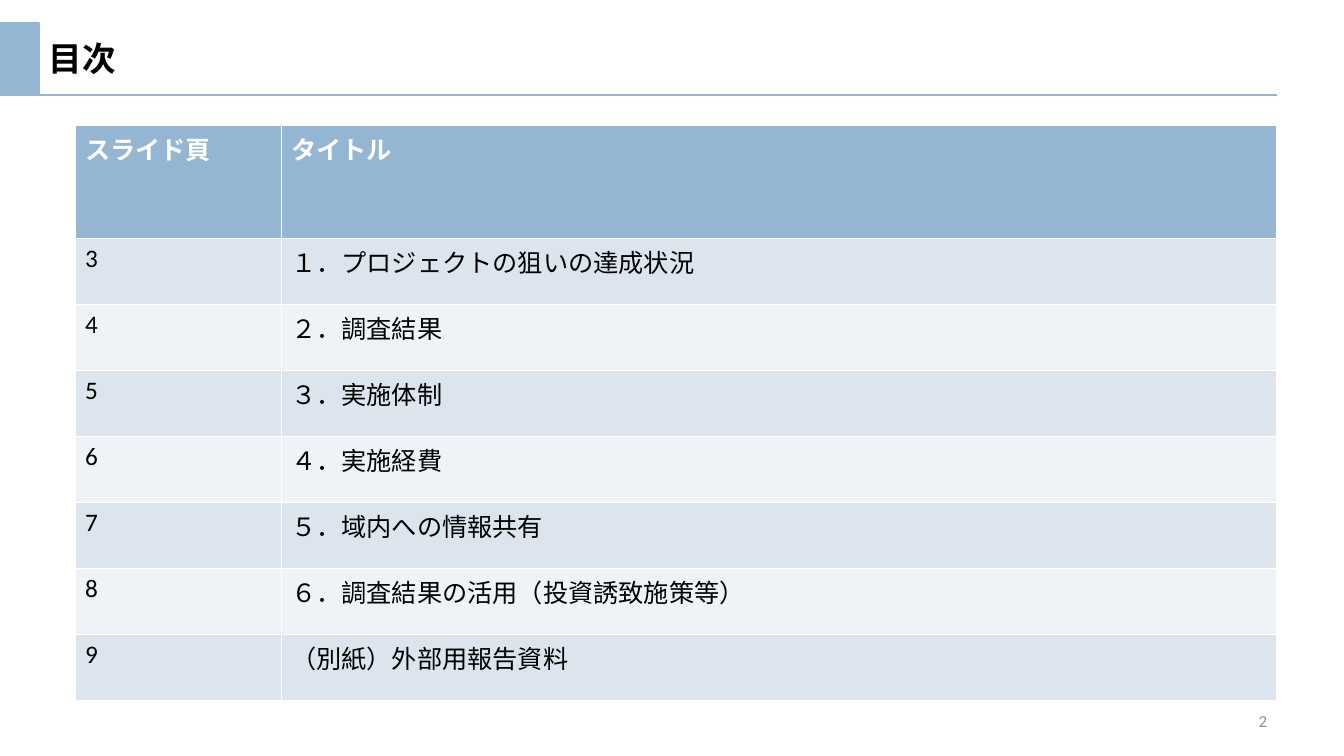
from dataclasses import dataclass

import pptx
import pptx.dml.color
import pptx.enum.shapes
import pptx.enum.text
import pptx.oxml.ns
import pptx.util
from lxml import etree

PX_PER_INCH = 100.8


@dataclass(frozen=True)
class Theme:
    font: str = "Calibri"
    accent: str = "94B6D2"
    band_dark: str = "DCE5EE"
    band_light: str = "EFF3F7"
    text: str = "000000"
    muted: str = "8C8C8C"
    white: str = "FFFFFF"
    title_size: int = 24
    table_size: int = 18
    number_size: int = 12
    rule_width: int = 2
    border_width: float = 0.73


@dataclass(frozen=True)
class Box:
    left: int
    top: int
    width: int
    height: int

    def emu(self) -> tuple:
        return tuple(px(n) for n in (self.left, self.top, self.width, self.height))


@dataclass(frozen=True)
class TextStyle:
    size: int
    color: str
    bold: bool = False


@dataclass(frozen=True)
class Entry:
    page: str
    title: str


THEME = Theme()
HEADER = Entry("スライド頁", "タイトル")
ENTRIES = [
    Entry("3", "１．プロジェクトの狙いの達成状況"),
    Entry("4", "２．調査結果"),
    Entry("5", "３．実施体制"),
    Entry("6", "４．実施経費"),
    Entry("7", "５．域内への情報共有"),
    Entry("8", "６．調査結果の活用（投資誘致施策等）"),
    Entry("9", "（別紙）外部用報告資料"),
]
COLUMN_WIDTHS = (206, 996)
HEADER_HEIGHT, ROW_HEIGHT = 113, 66


def px(length: int) -> int:
    return pptx.util.Emu(round(length * 914400 / PX_PER_INCH))


def rgb(color: str) -> pptx.dml.color.RGBColor:
    return pptx.dml.color.RGBColor.from_string(color)


def add_run(paragraph, text: str, style: TextStyle) -> None:
    run = paragraph.add_run()
    run.text = text
    run.font.name = THEME.font
    run.font.size = pptx.util.Pt(style.size)
    run.font.bold = style.bold
    run.font.color.rgb = rgb(style.color)


def set_rule(line) -> None:
    line.color.rgb = rgb(THEME.accent)
    line.width = pptx.util.Pt(THEME.rule_width)


def add_text(slide, box: Box, text: str, style: TextStyle,
             alignment=pptx.enum.text.PP_ALIGN.LEFT) -> None:
    frame = slide.shapes.add_textbox(*box.emu()).text_frame
    frame.word_wrap = True
    frame.vertical_anchor = pptx.enum.text.MSO_ANCHOR.MIDDLE
    frame.paragraphs[0].alignment = alignment
    add_run(frame.paragraphs[0], text, style)


def add_marker(slide, box: Box) -> None:
    shape = slide.shapes.add_shape(pptx.enum.shapes.MSO_SHAPE.RECTANGLE, *box.emu())
    shape.shadow.inherit = False
    shape.fill.solid()
    shape.fill.fore_color.rgb = rgb(THEME.accent)
    set_rule(shape.line)


def add_rule(slide, top: int, right: int) -> None:
    connector = slide.shapes.add_connector(
        pptx.enum.shapes.MSO_CONNECTOR.STRAIGHT, 0, px(top), px(right), px(top))
    set_rule(connector.line)
    etree.SubElement(connector._element.spPr, pptx.oxml.ns.qn("a:effectLst"))


def set_borders(cell) -> None:
    qn = pptx.oxml.ns.qn
    properties = cell._tc.get_or_add_tcPr()
    for side in ("a:lnL", "a:lnR", "a:lnT", "a:lnB"):
        border = etree.SubElement(properties, qn(side))
        border.set("w", str(pptx.util.Pt(THEME.border_width)))
        fill = etree.SubElement(border, qn("a:solidFill"))
        etree.SubElement(fill, qn("a:srgbClr")).set("val", THEME.white)


def fill_row(row, entry: Entry, fill: str, style: TextStyle) -> None:
    for cell, text in zip(row.cells, (entry.page, entry.title)):
        set_borders(cell)
        cell.fill.solid()
        cell.fill.fore_color.rgb = rgb(fill)
        add_run(cell.text_frame.paragraphs[0], text, style)


def add_contents(slide, left: int, top: int) -> None:
    height = HEADER_HEIGHT + ROW_HEIGHT * len(ENTRIES)
    box = Box(left, top, sum(COLUMN_WIDTHS), height)
    table = slide.shapes.add_table(
        len(ENTRIES) + 1, len(COLUMN_WIDTHS), *box.emu()).table
    for column, width in zip(table.columns, COLUMN_WIDTHS):
        column.width = px(width)
    header, *body = table.rows
    header.height = px(HEADER_HEIGHT)
    fill_row(header, HEADER, THEME.accent,
             TextStyle(THEME.table_size, THEME.white, bold=True))
    bands = (THEME.band_dark, THEME.band_light)
    for index, (row, entry) in enumerate(zip(body, ENTRIES)):
        row.height = px(ROW_HEIGHT)
        fill_row(row, entry, bands[index % 2],
                 TextStyle(THEME.table_size, THEME.text))


def main() -> None:
    presentation = pptx.Presentation()
    presentation.slide_width, presentation.slide_height = px(1344), px(756)
    slide = presentation.slides.add_slide(presentation.slide_layouts[6])

    # Heading marker, page number and title
    add_marker(slide, Box(0, 23, 39, 72))
    add_text(slide, Box(964, 701, 313, 40), "2",
             TextStyle(THEME.number_size, THEME.muted),
             pptx.enum.text.PP_ALIGN.RIGHT)
    add_text(slide, Box(39, 31, 903, 54), "目次",
             TextStyle(THEME.title_size, THEME.text, bold=True))

    # Table of contents
    add_contents(slide, left=75, top=125)

    # Rule under the heading
    add_rule(slide, top=95, right=1277)

    presentation.save("out.pptx")


if __name__ == "__main__":
    main()
